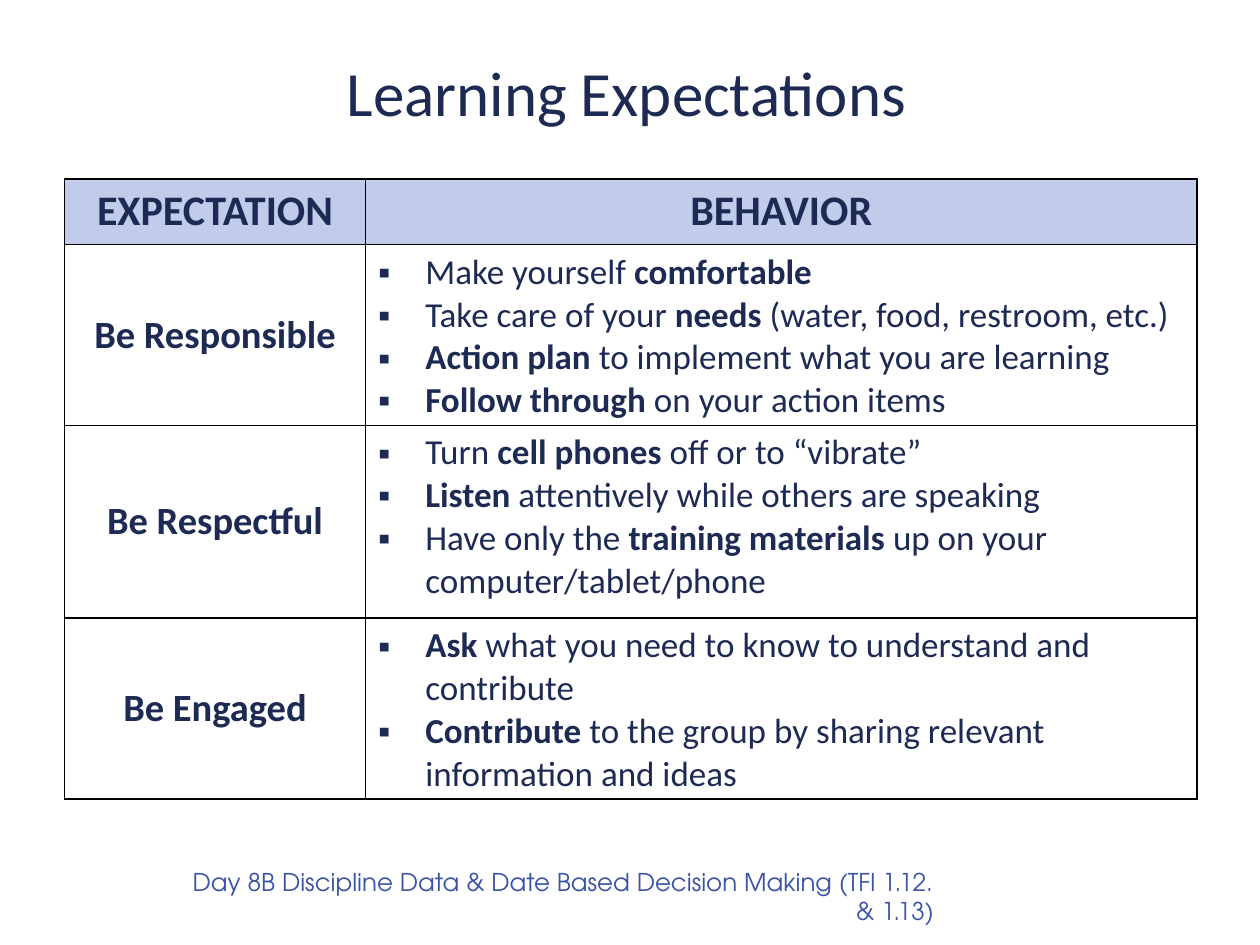
from lxml import etree
from pptx import Presentation, util as u
from pptx.dml.color import RGBColor
from pptx.enum import text
from pptx.oxml.ns import qn

NAVY = RGBColor(0x1D, 0x2A, 0x53)
BLUE = RGBColor(0x3A, 0x53, 0xA5)
HEADER_FILL = RGBColor(0xC1, 0xCC, 0xEB)
WHITE = RGBColor(0xFF, 0xFF, 0xFF)
BLACK = RGBColor(0x00, 0x00, 0x00)

HEADINGS = ("EXPECTATION", "BEHAVIOR")
EXPECTATIONS = {
    "Be Responsible": (
        "Make yourself *comfortable*",
        "Take care of your *needs* (water, food, restroom, etc.)",
        "*Action plan *to implement what you are learning",
        "*Follow through *on your action items",
    ),
    "Be Respectful": (
        "Turn *cell phones* off or to “vibrate”",
        "*Listen *attentively while others are speaking",
        "Have only the *training materials *up on your computer/tablet/phone",
    ),
    "Be Engaged": (
        "*Ask* what you need to know to understand and contribute",
        "*Contribute *to the group by sharing relevant information and ideas",
    ),
}
COLUMN_WIDTHS = (6.07, 16.76)
ROW_HEIGHTS = (1.32, 3.48, 3.89, 3.48)


def style_paragraph(paragraph, size, color=NAVY, name="Calibri", bold=None, align=None):
    """Set the alignment and font shared by all runs of a paragraph."""
    paragraph.alignment = align
    font = paragraph.font
    font.size, font.name, font.bold = u.Pt(size), name, bold
    font.color.rgb = color


def add_text(slide, box, content, size, color, name, align, anchor, top=0.13):
    """Add a wrapped one-paragraph text box."""
    frame = slide.shapes.add_textbox(*map(u.Cm, box)).text_frame
    frame.word_wrap = True
    frame.vertical_anchor = anchor
    frame.margin_top = u.Cm(top)
    paragraph = frame.paragraphs[0]
    paragraph.text = content
    style_paragraph(paragraph, size, color, name, align=align)


def add_bullet(paragraph):
    """Give a paragraph a hanging square bullet."""
    properties = paragraph._p.get_or_add_pPr()
    properties.set("marL", str(u.Cm(0.95)))
    properties.set("indent", str(-u.Cm(0.95)))
    color = etree.SubElement(properties, qn("a:buClr"))
    etree.SubElement(color, qn("a:srgbClr"), val=str(NAVY))
    etree.SubElement(properties, qn("a:buFont"), typeface="Arial")
    etree.SubElement(properties, qn("a:buChar"), char="▪")


def format_cell(cell, fill):
    """Draw thin black borders around a cell and set its fill."""
    properties = cell._tc.get_or_add_tcPr()
    for side in ("lnL", "lnR", "lnT", "lnB"):
        line = etree.SubElement(properties, qn(f"a:{side}"), w=str(u.Pt(1)))
        solid = etree.SubElement(line, qn("a:solidFill"))
        etree.SubElement(solid, qn("a:srgbClr"), val=str(BLACK))
    cell.fill.solid()
    cell.fill.fore_color.rgb = fill


def fill_label(cell, label, size, fill):
    """Write a bold centred label into a cell."""
    format_cell(cell, fill)
    paragraph = cell.text_frame.paragraphs[0]
    paragraph.text = label
    style_paragraph(paragraph, size, bold=True, align=text.PP_ALIGN.CENTER)


def fill_behaviors(cell, behaviors):
    """Write a bulleted list in which asterisks enclose bold words."""
    format_cell(cell, WHITE)
    frame = cell.text_frame
    for index, behavior in enumerate(behaviors):
        paragraph = frame.add_paragraph() if index else frame.paragraphs[0]
        add_bullet(paragraph)
        style_paragraph(paragraph, 20)
        for position, part in enumerate(behavior.split("*")):
            if part:
                run = paragraph.add_run()
                run.text = part
                run.font.bold = position % 2 == 1


def add_expectations(slide, left, top):
    """Add the table of expectations and behaviors."""
    size = (sum(COLUMN_WIDTHS), sum(ROW_HEIGHTS))
    table = slide.shapes.add_table(
        len(ROW_HEIGHTS), len(COLUMN_WIDTHS), *map(u.Cm, (left, top, *size))
    ).table
    table.first_row = table.horz_banding = False
    for column, width in zip(table.columns, COLUMN_WIDTHS):
        column.width = u.Cm(width)
    for row, height in zip(table.rows, ROW_HEIGHTS):
        row.height = u.Cm(height)
    for index, heading in enumerate(HEADINGS):
        fill_label(table.cell(0, index), heading, 24, HEADER_FILL)
    for index, (label, behaviors) in enumerate(EXPECTATIONS.items(), 1):
        label_cell = table.cell(index, 0)
        fill_label(label_cell, label, 22, WHITE)
        label_cell.vertical_anchor = text.MSO_ANCHOR.MIDDLE
        fill_behaviors(table.cell(index, 1), behaviors)


def main():
    """Build and save the slide."""
    presentation = Presentation()
    presentation.slide_width, presentation.slide_height = u.Cm(25.4), u.Cm(19.05)
    slide = presentation.slides.add_slide(presentation.slide_layouts[6])
    add_text(slide, (3.48, 16.59, 15.6, 1.63),
             "Day 8B Discipline Data & Date Based Decision Making (TFI 1.12. & 1.13)",
             14, BLUE, "TeX Gyre Adventor", text.PP_ALIGN.RIGHT,
             text.MSO_ANCHOR.TOP, top=0.89)
    add_expectations(slide, 1.3, 3.61)
    add_text(slide, (1.3, 0.97, 22.66, 1.73), "Learning Expectations",
             36, NAVY, "Calibri", text.PP_ALIGN.CENTER, text.MSO_ANCHOR.MIDDLE)
    presentation.save("out.pptx")


if __name__ == "__main__":
    main()
